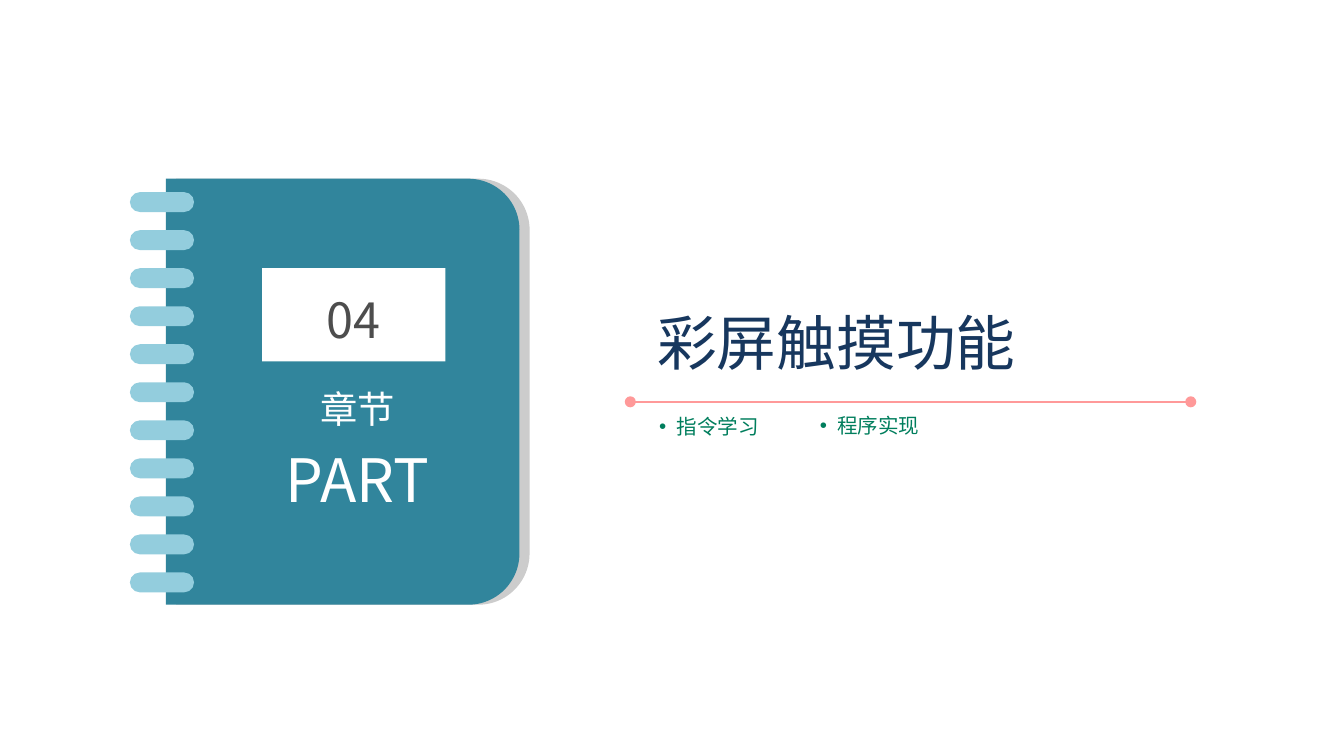
from lxml import etree
from pptx import Presentation, util as u
from pptx.dml.color import RGBColor
from pptx.enum import shapes as sh, text as tx
from pptx.oxml.ns import qn

theme = {
    "navy": "17375E", "pink": "FF9999", "grey": "CCCCCC", "teal": "31859C",
    "sky": "93CDDD", "white": "FFFFFF", "ink": "4D4D4D", "green": "007E5D",
    "latin": "Arial", "cjk": "Noto Sans CJK SC",
    "big": 32, "num": 26, "mid": 20, "small": 11,
}

deck = Presentation()
deck.slide_width = u.Inches(10)
deck.slide_height = deck.slide_width * 9 // 16
cell = deck.slide_width / 100
page = deck.slides.add_slide(deck.slide_layouts[5])


def grid(*nums):
    return [round(n * cell) for n in nums]


def style(para, size, face, tint, align):
    para.alignment = align
    for run in para.runs:
        run.font.size = u.Pt(theme[size])
        run.font.name = theme[face]
        run.font.color.rgb = RGBColor.from_string(theme[tint])
        etree.SubElement(run.font._element, qn("a:ea"), typeface=theme["cjk"])


mid = tx.PP_ALIGN.CENTER
kind = sh.MSO_SHAPE

rule = page.shapes.add_connector(sh.MSO_CONNECTOR.STRAIGHT, *grid(46.9, 29.9, 88.6, 29.9))
rule.line.color.rgb = RGBColor.from_string(theme["pink"])
rule.line.width = u.Pt(1)
for end in ("a:headEnd", "a:tailEnd"):
    etree.SubElement(rule.line._get_or_add_ln(), qn(end), type="oval")
etree.SubElement(rule._element.spPr, qn("a:effectLst"))

title = page.shapes.title
title.left, title.top, title.width, title.height = grid(40.1, 22.7, 44.3, 5.4)
title.text_frame.text = "彩屏触摸功能"
style(title.text_frame.paragraphs[0], "big", "latin", "navy", mid)

parts = [
    (kind.ROUND_2_SAME_RECTANGLE, (10.4, 16, 31.7, 26.3), "grey", 90, 0.145),
    (kind.ROUND_2_SAME_RECTANGLE, (9.65, 16, 31.7, 26.3), "teal", 90, 0.145),
    (kind.RECTANGLE, (19.5, 19.95, 13.65, 6.95), "white", 0, None),
]
parts += [(kind.ROUNDED_RECTANGLE, (9.67, 14.3 + 2.83 * i, 4.77, 1.48), "sky", 0, 0.5)
          for i in range(11)]
for form, box, tint, turn, curve in parts:
    part = page.shapes.add_shape(form, *grid(*box))
    part.rotation = turn
    if curve:
        part.adjustments[0] = curve
    part.fill.solid()
    part.fill.fore_color.rgb = RGBColor.from_string(theme[tint])
    part.line.fill.background()
    part.shadow.inherit = False

labels = [
    ((19.85, 21.55, 12.9, 4.4), [("04", "num")], "cjk", "ink"),
    ((20.45, 28.6, 12.3, 9.8), [("章节", "mid"), ("PART", "big")], "cjk", "white"),
    ((48.35, 30.4, 9, 2.6), [("指令学习", "small")], "latin", "green"),
    ((60.3, 30.35, 9, 2.6), [("程序实现", "small")], "latin", "green"),
]
frames = [title.text_frame]
for box, lines, face, tint in labels:
    frame = page.shapes.add_textbox(*grid(*box)).text_frame
    frames.append(frame)
    frame.text = "\n".join(line for line, size in lines)
    for para, (line, size) in zip(frame.paragraphs, lines):
        if size == "small":
            props = para._p.get_or_add_pPr()
            props.set("marL", str(u.Inches(0.13)))
            props.set("indent", str(-u.Inches(0.13)))
            etree.SubElement(props, qn("a:buFont"), typeface=theme["latin"])
            etree.SubElement(props, qn("a:buChar"), char="•")
        if size == "big":
            para.space_before = u.Pt(theme["big"] / 5)
        style(para, size, face, tint, tx.PP_ALIGN.LEFT if size == "small" else mid)

for i, frame in enumerate(frames):
    bullet = i > 2
    frame.word_wrap = not bullet
    frame.auto_size = tx.MSO_AUTO_SIZE.SHAPE_TO_FIT_TEXT
    frame.vertical_anchor = tx.MSO_ANCHOR.MIDDLE
    frame.margin_left = frame.margin_right = u.Inches(0.07 if bullet else 0)
    frame.margin_top = frame.margin_bottom = u.Inches(0.04 if bullet else 0)

deck.save("out.pptx")
